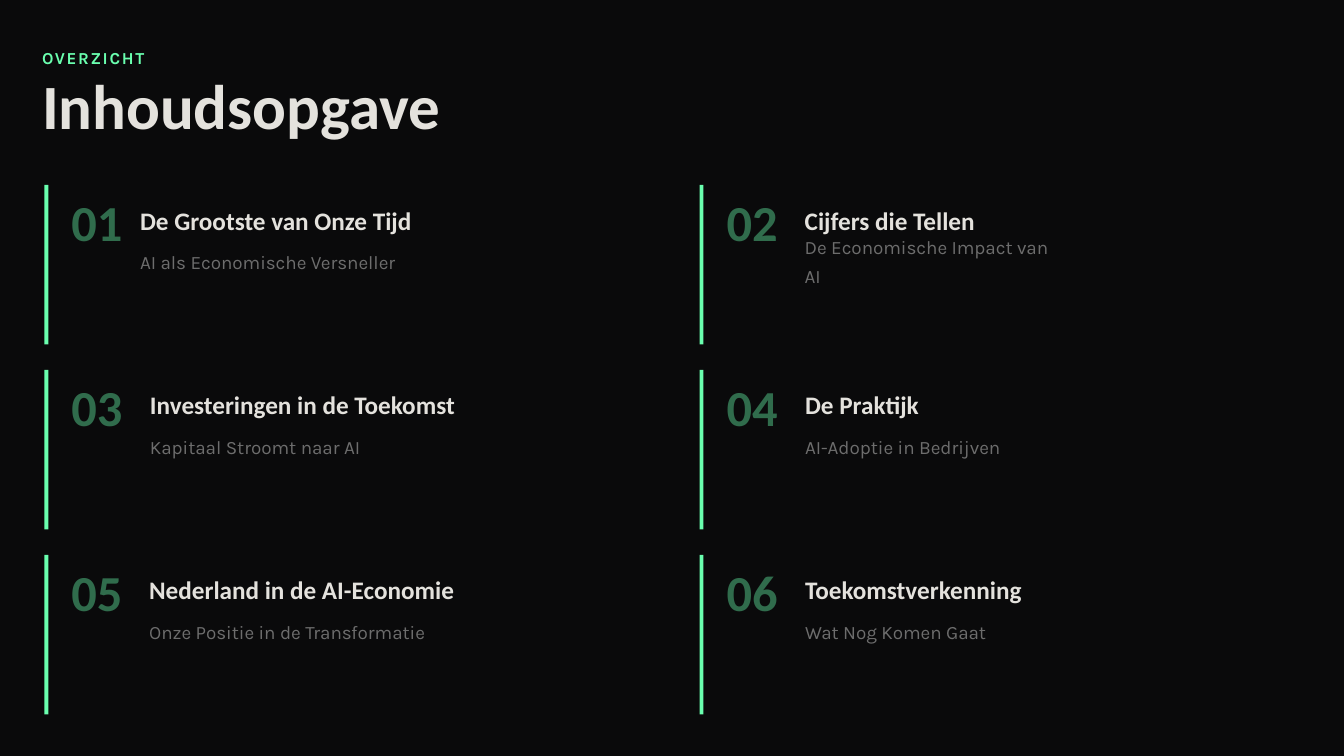
from dataclasses import dataclass

from lxml.etree import SubElement
from pptx import Presentation
from pptx.dml.color import RGBColor
from pptx.enum.shapes import MSO_SHAPE as Shape
from pptx.enum.text import MSO_ANCHOR as Anchor
from pptx.oxml.ns import qn
from pptx.slide import Slide
from pptx.util import Cm, Pt

COLORS = {
    "background": "0A0A0B",
    "accent": "6AFFAF",
    "light": "E4E2DD",
    "muted": "6D6D6D",
}


@dataclass(frozen=True)
class TextStyle:
    font: str
    size: float
    color: str
    line_spacing: float
    bold: bool = False
    opacity: int = 100  # percent
    tracking: float = 0  # points


@dataclass(frozen=True)
class Chapter:
    heading: str
    subtitle: str
    indent: float  # cm from the bar to the heading
    width: float  # cm


KICKER = TextStyle("Karla", 12, "accent", 1.3, bold=True, tracking=1.2)
TITLE = TextStyle("Calibri", 45, "light", 0.8, bold=True)
NUMBER = TextStyle("Calibri", 36, "accent", 0.8, bold=True, opacity=40)
HEADING = TextStyle("Calibri", 18, "light", 1.1, bold=True)
SUBTITLE = TextStyle("Karla", 13.5, "muted", 1.3)

CHAPTERS = [
    Chapter("De Grootste van Onze Tijd", "AI als Economische Versneller", 2.41, 7.52),
    Chapter("Cijfers die Tellen", "De Economische Impact van AI", 2.65, 6.72),
    Chapter("Investeringen in de Toekomst", "Kapitaal Stroomt naar AI", 2.66, 8.51),
    Chapter("De Praktijk", "AI-Adoptie in Bedrijven", 2.66, 5.13),
    Chapter("Nederland in de AI-Economie", "Onze Positie in de Transformatie", 2.64, 8.43),
    Chapter("Toekomstverkenning", "Wat Nog Komen Gaat", 2.66, 6.22),
]

# Chapter grid, in cm
COLUMNS = 2
GRID_LEFT, GRID_TOP = 1.12, 4.66
COLUMN_PITCH, ROW_PITCH = 16.51, 4.66
BAR_WIDTH, BAR_HEIGHT = 0.1, 4.02


def rgb(name: str) -> RGBColor:
    return RGBColor.from_string(COLORS[name])


def add_text(slide: Slide, text: str, style: TextStyle,
             left: float, top: float, width: float, height: float) -> None:
    frame = slide.shapes.add_textbox(Cm(left), Cm(top), Cm(width), Cm(height)).text_frame
    frame.word_wrap = True
    frame.vertical_anchor = Anchor.MIDDLE
    frame.margin_left = frame.margin_top = frame.margin_right = frame.margin_bottom = 0
    paragraph = frame.paragraphs[0]
    paragraph.text = text
    paragraph.line_spacing = style.line_spacing
    font = paragraph.font
    font.name, font.size, font.bold = style.font, Pt(style.size), style.bold
    font.color.rgb = rgb(style.color)

    # Letter spacing and transparency
    properties = paragraph._p.pPr.find(qn("a:defRPr"))
    if style.tracking:
        properties.set("spc", str(round(style.tracking * 100)))
    if style.opacity < 100:
        color = properties.find(qn("a:solidFill")).find(qn("a:srgbClr"))
        SubElement(color, qn("a:alpha")).set("val", str(style.opacity * 1000))


def add_chapter(slide: Slide, index: int, chapter: Chapter) -> None:
    row, column = divmod(index, COLUMNS)
    left = GRID_LEFT + column * COLUMN_PITCH
    top = GRID_TOP + row * ROW_PITCH

    bar = slide.shapes.add_shape(
        Shape.RECTANGLE, Cm(left), Cm(top), Cm(BAR_WIDTH), Cm(BAR_HEIGHT))
    bar.shadow.inherit = False
    bar.fill.solid()
    bar.fill.fore_color.rgb = rgb("accent")
    bar.line.fill.background()

    text_left = left + chapter.indent
    add_text(slide, f"{index + 1:02}", NUMBER, left + 0.68, top + 0.42, 2.18, 1.27)
    add_text(slide, chapter.heading, HEADING, text_left, top + 0.42, chapter.width, 0.85)
    add_text(slide, chapter.subtitle, SUBTITLE, text_left, top + 1.48, chapter.width - 0.08, 0.74)


def main() -> None:
    presentation = Presentation()
    presentation.slide_width, presentation.slide_height = Cm(33.87), Cm(19.05)
    slide = presentation.slides.add_slide(presentation.slide_layouts[6])
    slide.background.fill.solid()
    slide.background.fill.fore_color.rgb = rgb("background")

    # Title block
    add_text(slide, "OVERZICHT", KICKER, 1.06, 1.06, 31.95, 0.64)
    add_text(slide, "Inhoudsopgave", TITLE, 1.06, 2.01, 32.54, 1.57)

    # Table of contents
    for index, chapter in enumerate(CHAPTERS):
        add_chapter(slide, index, chapter)

    presentation.save("out.pptx")


if __name__ == "__main__":
    main()
